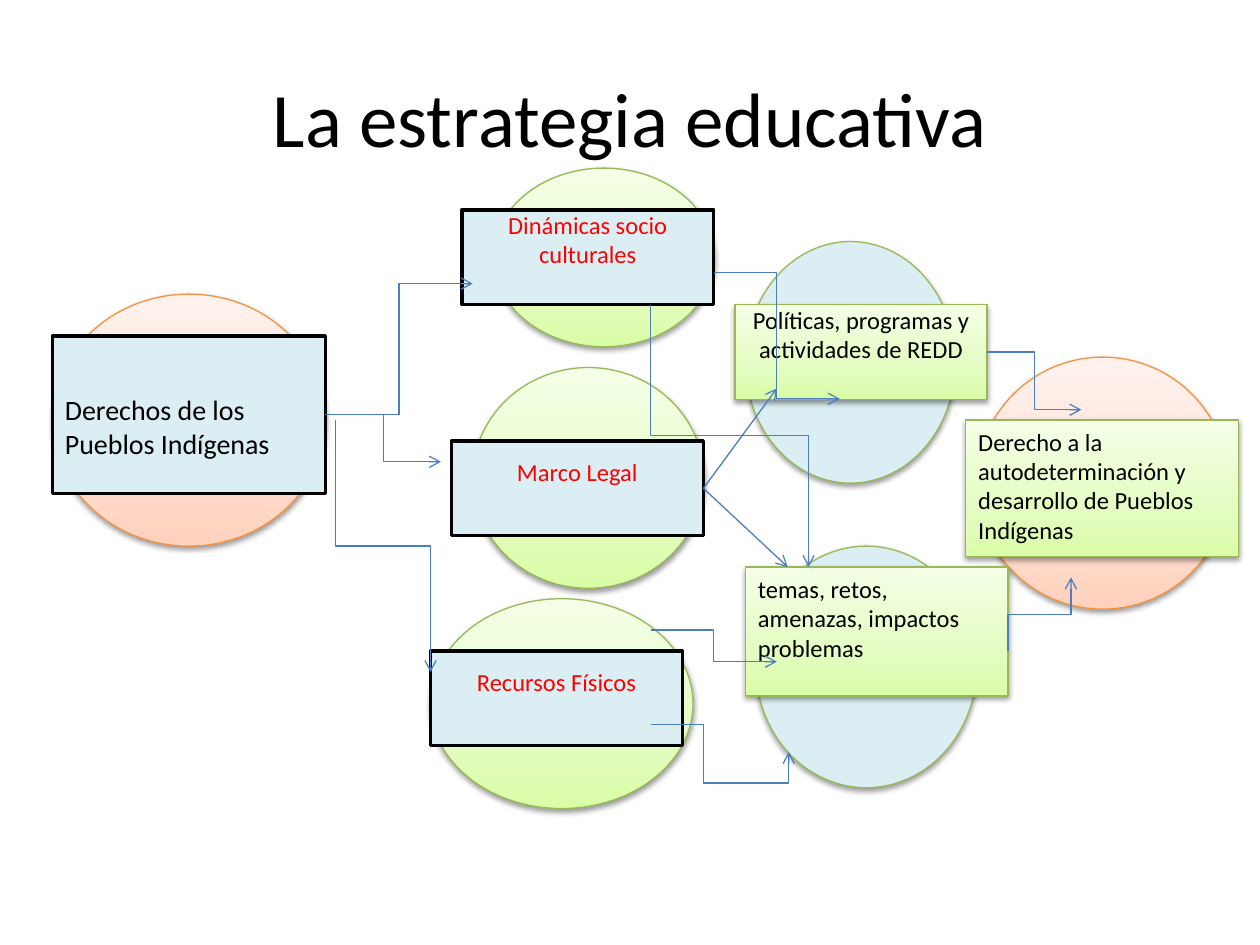
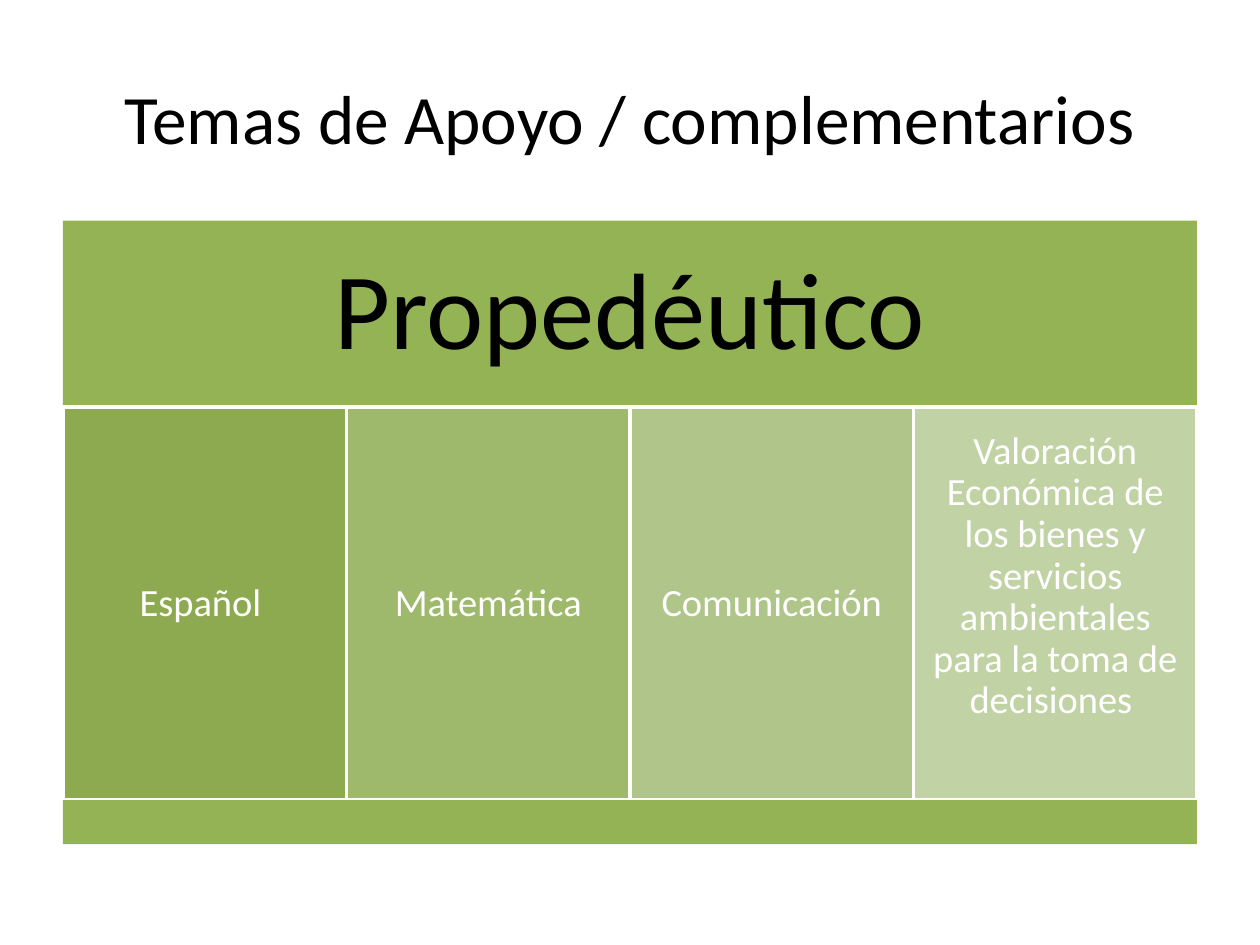
from lxml import etree
from pptx import Presentation
from pptx import util as u
from pptx.dml.color import RGBColor
from pptx.enum import shapes, text
from pptx.oxml import parse_xml
from pptx.oxml.ns import nsdecls, qn

FONT = "Calibri"
BLACK, WHITE, RED = "000000", "FFFFFF", "FF0000"
PALE_BLUE, BLUE, GREEN_LINE, ORANGE_LINE = "DBEEF4", "4B7EBC", "98B955", "F69240"
BAND_GREEN = "94B355"
GREENS = ("DAFDA7", "E4FCC2", "F5FFE7")
ORANGES = ("FFD2BD", "FFDED0", "FFF2ED")
RECT, OVAL = shapes.MSO_SHAPE.RECTANGLE, shapes.MSO_SHAPE.OVAL
LEFT, CENTER = text.PP_ALIGN.LEFT, text.PP_ALIGN.CENTER
TOP, MIDDLE = text.MSO_ANCHOR.TOP, text.MSO_ANCHOR.MIDDLE
TITLE_BOX = (1.27, 0.76, 22.86, 3.18)


def rgb(value):
    return RGBColor.from_string(value)


def write(sp, content, size=14, color=BLACK, align=CENTER, anchor=MIDDLE,
          insets=(0.25, 0.13, 0.25, 0.13), spacing=1.0):
    """Fill a shape with one paragraph; insets are left, top, right, bottom in cm."""
    tf = sp.text_frame
    tf.word_wrap = True
    tf.vertical_anchor = anchor
    tf.margin_left, tf.margin_top, tf.margin_right, tf.margin_bottom = map(u.Cm, insets)
    p = tf.paragraphs[0]
    p.alignment = align
    p.line_spacing = spacing
    r = p.add_run()
    r.text = content
    r.font.name, r.font.size = FONT, u.Pt(size)
    r.font.color.rgb = rgb(color)


def add_title(slide, content, size):
    write(slide.shapes.add_textbox(*map(u.Cm, TITLE_BOX)), content, size=size)


def set_gradient(sp, colors):
    """Run the colours from the bottom of the shape to its top."""
    stops = "".join(f'<a:gs pos="{pos}"><a:srgbClr val="{c}"/></a:gs>'
                    for pos, c in zip((0, 35000, 100000), colors))
    sp._element.spPr.append(parse_xml(
        f'<a:gradFill {nsdecls("a")} rotWithShape="1"><a:gsLst>{stops}</a:gsLst>'
        '<a:lin ang="16200000" scaled="0"/></a:gradFill>'))


def add_shadow(sp):
    effects = sp._element.spPr.find(qn("a:effectLst"))
    effects.append(parse_xml(
        f'<a:outerShdw {nsdecls("a")} blurRad="40000" dist="20000" dir="5400000" '
        'rotWithShape="0"><a:srgbClr val="000000"><a:alpha val="38000"/></a:srgbClr>'
        '</a:outerShdw>'))


def add_shape(slide, kind, box, fill, line=None, width=0.75, shadow=False):
    """Draw a preset shape; fill is a colour or three gradient colours."""
    sp = slide.shapes.add_shape(kind, *map(u.Cm, box))
    if isinstance(fill, str):
        sp.fill.solid()
        sp.fill.fore_color.rgb = rgb(fill)
    else:
        set_gradient(sp, fill)
    if line:
        sp.line.color.rgb = rgb(line)
        sp.line.width = u.Pt(width)
    else:
        sp.line.fill.background()
    sp.shadow.inherit = False
    if shadow:
        add_shadow(sp)
    return sp


def add_arrow(slide, start, end, kind=shapes.MSO_CONNECTOR.ELBOW, source=None, upright=False):
    """Join two points in cm; source glues the start to the right side of a box,
    and upright makes an elbow leave and arrive vertically."""
    (x1, y1), (x2, y2) = start, end
    if upright:
        cx, cy, dx, dy = (x1 + x2) / 2, (y1 + y2) / 2, (x2 - x1) / 2, (y2 - y1) / 2
        x1, y1, x2, y2 = cx + dy, cy - dx, cx - dy, cy + dx
    cxn = slide.shapes.add_connector(kind, *map(u.Cm, (x1, y1, x2, y2)))
    sp_pr = cxn._element.spPr
    if upright:
        sp_pr.find(qn("a:xfrm")).set("rot", "16200000")
    if source:
        cxn.begin_connect(source, 3)
    cxn.line.color.rgb = rgb(BLUE)
    cxn.line.width = u.Pt(0.75)
    etree.SubElement(cxn.line._get_or_add_ln(), qn("a:tailEnd"), type="arrow")
    etree.SubElement(sp_pr, qn("a:effectLst"))
    return cxn


def add_second_bend(cxn, **adjusts):
    geom = cxn._element.spPr.find(qn("a:prstGeom"))
    geom.set("prst", "bentConnector4")
    guides = geom.find(qn("a:avLst"))
    for name, value in adjusts.items():
        etree.SubElement(guides, qn("a:gd"), name=name, fmla=f"val {value}")


def draw_strategy(slide, left, top):
    """Draw the map of rights, resources and themes from its top left corner."""
    def at(x, y):
        return left + x, top + y

    circles = [
        (8.89, 0, 4.45, 3.6, GREENS, GREEN_LINE),
        (8.47, 4.02, 4.66, 4.45, GREENS, GREEN_LINE),
        (7.62, 8.68, 5.29, 4.23, GREENS, GREEN_LINE),
        (13.97, 1.48, 4.23, 4.87, PALE_BLUE, GREEN_LINE),
        (14.18, 7.62, 4.45, 4.87, PALE_BLUE, GREEN_LINE),
        (0, 2.54, 5.5, 5.08, ORANGES, ORANGE_LINE),
        (18.63, 3.81, 5.08, 5.08, ORANGES, ORANGE_LINE),
    ]
    for x, y, w, h, fill, line in circles:
        add_shape(slide, OVAL, (*at(x, y), w, h), fill, line, shadow=True)

    framed = dict(fill=PALE_BLUE, line=BLACK, width=2)
    shaded = dict(fill=GREENS, line=GREEN_LINE, shadow=True)

    def label(x, y, w, h, look, content, inset_top, **fmt):
        sp = add_shape(slide, RECT, (*at(x, y), w, h), **look)
        write(sp, content, anchor=TOP, insets=(0.25, inset_top, 0.25, 0), **fmt)
        return sp

    label(8.25, 0.84, 5.08, 1.91, framed, "Dinámicas socio culturales", 0, color=RED)
    legal = label(8.04, 5.5, 5.08, 1.91, framed, "Marco Legal", 0.32, color=RED)
    label(7.62, 9.73, 5.08, 1.91, framed, "Recursos Físicos", 0.32, color=RED)
    policies = label(13.76, 2.75, 5.08, 1.91, shaded,
                     "Políticas, programas y actividades de REDD", 0)
    label(13.97, 8.04, 5.29, 2.6, shaded,
          "temas, retos, amenazas, impactos problemas", 0.14, align=LEFT)
    rights = label(0, 3.38, 5.5, 3.18, framed, "Derechos de los Pueblos Indígenas",
                   1.15, size=16, align=LEFT)
    label(18.41, 5.08, 5.5, 2.75, shaded,
          "Derecho a la autodeterminación y desarrollo de Pueblos Indígenas",
          0.13, align=LEFT)

    straight = dict(kind=shapes.MSO_CONNECTOR.STRAIGHT, source=legal)
    arrows = [
        ((5.5, 4.97), (8.47, 2.33), dict(source=rights)),
        ((5.5, 4.97), (7.83, 5.92), dict(source=rights)),
        ((5.71, 5.08), (7.62, 10.16), dict(upright=True)),
        ((13.33, 2.11), (15.87, 4.65), {}),
        ((12.06, 2.75), (15.24, 8.04), dict(upright=True)),
        ((12.06, 9.31), (14.6, 9.95), {}),
        ((13.12, 6.45), (14.6, 4.44), straight),
        ((13.12, 6.45), (14.82, 8.04), straight),
        ((18.84, 3.7), (20.74, 4.87), dict(source=policies)),
        ((19.26, 9.73), (20.53, 8.25), dict(upright=True)),
    ]
    for start, end, options in arrows:
        add_arrow(slide, at(*start), at(*end), **options)
    loop = add_arrow(slide, at(12.06, 11.22), at(14.84, 11.77))
    add_second_bend(loop, adj1=38200, adj2=214000)


def draw_topics(slide, left, top, width, height):
    """Draw a heading band, four equal columns and a closing band."""
    head_h, foot_h = 3.76, 0.89
    body_h = height - head_h - foot_h
    head = add_shape(slide, RECT, (left, top, width, head_h), BAND_GREEN)
    write(head, "Propedéutico", size=62, insets=(0.66,) * 4, spacing=0.9)

    columns = [
        ("Español ", "8DAA51", 0.23),
        ("Matemática", "9EB86C", 0.23),
        ("Comunicación", "AFC589", 0.23),
        ("Valoración Económica de los bienes y servicios ambientales "
         "para la toma de decisiones ", "C1D3A5", 1.32),
    ]
    col_w = width / len(columns)
    for i, (topic, fill, inset_bottom) in enumerate(columns):
        box = (left + i * col_w, top + head_h, col_w, body_h)
        sp = add_shape(slide, RECT, box, fill, WHITE, 2)
        write(sp, topic, size=22, color=WHITE, spacing=0.9,
              insets=(0.23, 0.23, 0.23, inset_bottom))

    add_shape(slide, RECT, (left, top + height - foot_h, width, foot_h), BAND_GREEN)


def main():
    prs = Presentation()
    prs.slide_width, prs.slide_height = u.Cm(25.4), u.Cm(19.05)
    blank = prs.slide_layouts[6]

    slide = prs.slides.add_slide(blank)
    add_title(slide, "La estrategia educativa", 44)
    draw_strategy(slide, 1.06, 3.39)

    slide = prs.slides.add_slide(blank)
    add_title(slide, "Temas de Apoyo / complementarios", 39.6)
    draw_topics(slide, 1.27, 4.45, 22.86, 12.57)

    prs.save("out.pptx")


if __name__ == "__main__":
    main()
